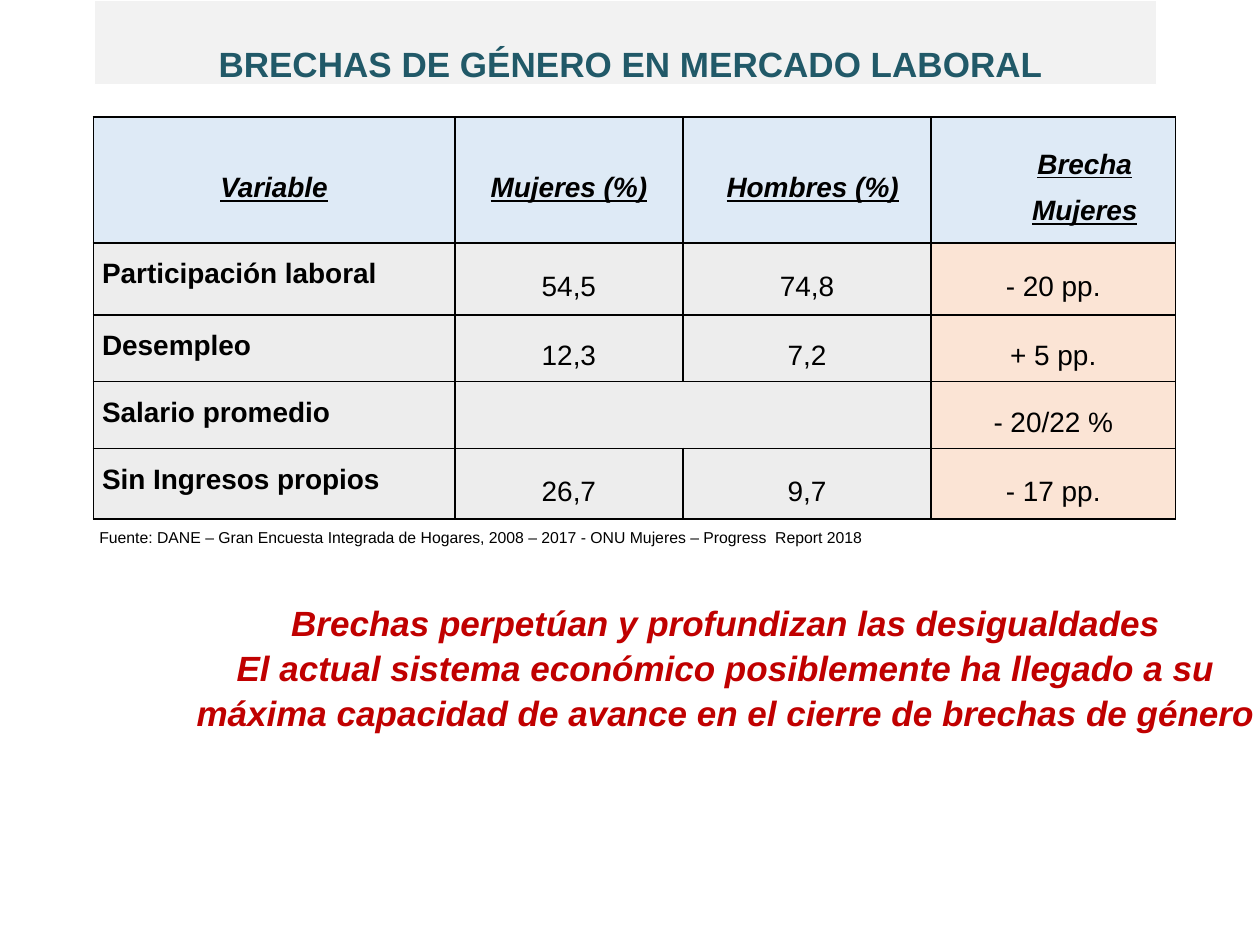
from dataclasses import dataclass

from lxml.etree import SubElement
from pptx import Presentation
from pptx.dml.color import RGBColor
from pptx.enum.text import MSO_ANCHOR, MSO_AUTO_SIZE, PP_ALIGN
from pptx.oxml.ns import qn
from pptx.util import Inches, Pt

FONT = "Arial"
BLACK = RGBColor(0x00, 0x00, 0x00)
WHITE = RGBColor(0xFF, 0xFF, 0xFF)
TEAL = RGBColor(0x21, 0x59, 0x68)
RED = RGBColor(0xC0, 0x00, 0x00)
TITLE_GRAY = RGBColor(0xF2, 0xF2, 0xF2)
HEADER_BLUE = RGBColor(0xDE, 0xEA, 0xF6)
BODY_GRAY = RGBColor(0xED, 0xED, 0xED)
GAP_PEACH = RGBColor(0xFB, 0xE4, 0xD5)


@dataclass
class TextStyle:
    size: float
    color: RGBColor = BLACK
    bold: bool = False
    italic: bool = False
    underline: bool = False


@dataclass
class Column:
    header: str
    width: float
    header_indent: float = 0


@dataclass
class Indicator:
    name: str
    women: str
    men: str
    gap: str
    height: float


TITLE_STYLE = TextStyle(20, TEAL, bold=True)
HEADER_STYLE = TextStyle(16, bold=True, italic=True, underline=True)
NAME_STYLE = TextStyle(16, bold=True)
VALUE_STYLE = TextStyle(16)
SOURCE_STYLE = TextStyle(9)
MESSAGE_STYLE = TextStyle(20, RED, bold=True, italic=True)

COLUMNS = [
    Column("Variable", 2.87),
    Column("Mujeres (%)", 1.81),
    Column("Hombres (%)", 1.97, 0.09),
    Column("Brecha Mujeres", 1.94, 0.5),
]
HEADER_HEIGHT = 1
INDICATORS = [
    Indicator("Participación laboral", "54,5", "74,8", "- 20 pp.", 0.57),
    Indicator("Desempleo", "12,3", "7,2", "+ 5 pp.", 0.53),
    Indicator("Salario promedio", "", "", "- 20/22 %", 0.53),
    Indicator("Sin Ingresos propios", "26,7", "9,7", "- 17 pp.", 0.56),
]
SOURCE = ("Fuente: DANE – Gran Encuesta Integrada de Hogares, 2008 – 2017 - "
          "ONU Mujeres – Progress  Report 2018")
MESSAGES = [
    "Brechas perpetúan y profundizan las desigualdades",
    "El actual sistema económico posiblemente ha llegado a su máxima "
    "capacidad de avance en el cierre de brechas de género",
]


def write_paragraph(paragraph, text: str, style: TextStyle, alignment=PP_ALIGN.LEFT,
                    line_spacing: float = 1, indent: float = 0) -> None:
    paragraph.text = text
    paragraph.alignment = alignment
    paragraph.line_spacing = line_spacing
    if indent:
        properties = paragraph._p.get_or_add_pPr()
        properties.set("marL", str(Inches(indent)))
        properties.set("indent", "0")
    font = paragraph.font
    font.name = FONT
    font.size = Pt(style.size)
    font.color.rgb = style.color
    font.bold = style.bold
    font.italic = style.italic
    font.underline = style.underline


def add_cell_borders(cell) -> None:
    properties = cell._tc.get_or_add_tcPr()
    for index, side in enumerate(("a:lnL", "a:lnR", "a:lnT", "a:lnB")):
        line = SubElement(properties, qn(side), w=str(Pt(1)))
        fill = SubElement(line, qn("a:solidFill"))
        SubElement(fill, qn("a:srgbClr"), val=str(BLACK))
        properties.remove(line)
        properties.insert(index, line)


def fill_cell(cell, text: str, style: TextStyle, color: RGBColor,
              alignment=PP_ALIGN.CENTER, anchor=MSO_ANCHOR.MIDDLE,
              indent: float = 0) -> None:
    cell.margin_left = cell.margin_right = Inches(0.07)
    cell.margin_top = cell.margin_bottom = 0
    cell.vertical_anchor = anchor
    cell.fill.solid()
    cell.fill.fore_color.rgb = color
    add_cell_borders(cell)
    write_paragraph(cell.text_frame.paragraphs[0], text, style, alignment, 1.5, indent)


def add_title(slide) -> None:
    title = slide.shapes.title
    title.left, title.top = Inches(0.75), Inches(0)
    title.width, title.height = Inches(8.43), Inches(0.67)
    title.fill.solid()
    title.fill.fore_color.rgb = TITLE_GRAY
    title.line.color.rgb = WHITE
    title.line.width = Pt(0.75)
    frame = title.text_frame
    frame.auto_size = MSO_AUTO_SIZE.NONE
    frame.vertical_anchor = MSO_ANCHOR.BOTTOM
    frame.margin_left = Inches(0.08)
    frame.margin_top = Inches(0.05)
    frame.margin_right = frame.margin_bottom = 0
    write_paragraph(frame.paragraphs[0], "BRECHAS DE GÉNERO EN MERCADO LABORAL",
                    TITLE_STYLE, PP_ALIGN.CENTER)


def add_gap_table(slide) -> None:
    heights = [HEADER_HEIGHT] + [indicator.height for indicator in INDICATORS]
    table = slide.shapes.add_table(
        len(heights), len(COLUMNS), Inches(0.74), Inches(0.93),
        Inches(sum(column.width for column in COLUMNS)), Inches(sum(heights))).table
    for row, height in zip(table.rows, heights):
        row.height = Inches(height)
    for index, column in enumerate(COLUMNS):
        table.columns[index].width = Inches(column.width)
        fill_cell(table.cell(0, index), column.header, HEADER_STYLE, HEADER_BLUE,
                  indent=column.header_indent)
    for row, indicator in enumerate(INDICATORS, start=1):
        fill_cell(table.cell(row, 0), indicator.name, NAME_STYLE, BODY_GRAY,
                  PP_ALIGN.LEFT, MSO_ANCHOR.TOP)
        fill_cell(table.cell(row, 1), indicator.women, VALUE_STYLE, BODY_GRAY)
        fill_cell(table.cell(row, 2), indicator.men, VALUE_STYLE, BODY_GRAY)
        fill_cell(table.cell(row, 3), indicator.gap, VALUE_STYLE, GAP_PEACH)
        if not indicator.women and not indicator.men:
            table.cell(row, 1).merge(table.cell(row, 2))


def add_text_frame(slide, left: float, top: float, width: float, height: float):
    box = slide.shapes.add_textbox(Inches(left), Inches(top), Inches(width), Inches(height))
    frame = box.text_frame
    frame.word_wrap = True
    frame.auto_size = MSO_AUTO_SIZE.SHAPE_TO_FIT_TEXT
    return frame


def add_source(slide) -> None:
    paragraph = add_text_frame(slide, 0.59, 4.13, 6.53, 0.26).paragraphs[0]
    write_paragraph(paragraph, SOURCE, SOURCE_STYLE, line_spacing=1.07, indent=0.1)
    paragraph.space_after = Pt(8)


def add_messages(slide) -> None:
    frame = add_text_frame(slide, 1.24, 4.7, 9.04, 1.18)
    for index, message in enumerate(MESSAGES):
        paragraph = frame.add_paragraph() if index else frame.paragraphs[0]
        write_paragraph(paragraph, message, MESSAGE_STYLE, PP_ALIGN.CENTER, 1.07)


def main() -> None:
    presentation = Presentation()
    presentation.slide_width = Inches(10)
    presentation.slide_height = Inches(7.5)
    slide = presentation.slides.add_slide(presentation.slide_layouts.get_by_name("Title Only"))
    add_title(slide)
    add_gap_table(slide)
    add_source(slide)
    add_messages(slide)
    presentation.save("out.pptx")


if __name__ == "__main__":
    main()
